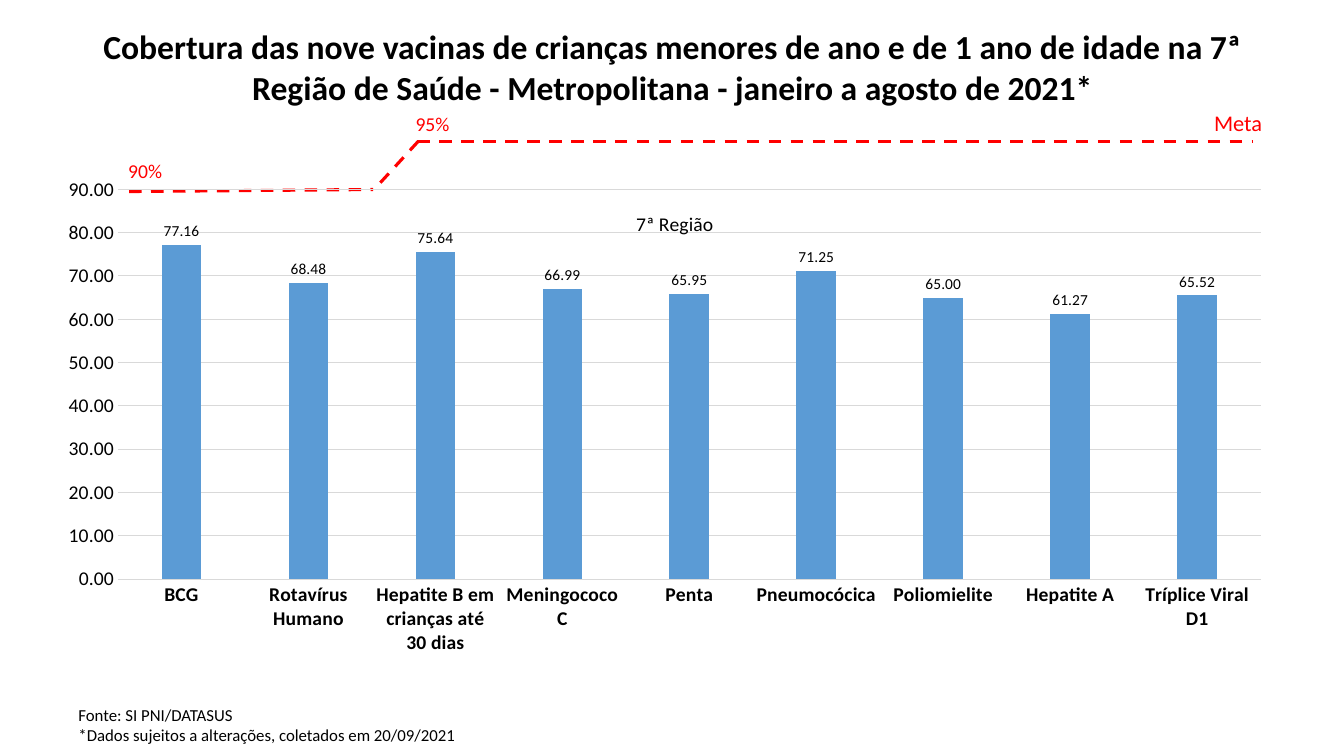
import pptx
import pptx.chart.data
import pptx.dml.color
import pptx.enum.chart
import pptx.enum.dml
import pptx.enum.shapes
import pptx.enum.text
import pptx.oxml
import pptx.oxml.ns
import pptx.util

EMU_PER_PX = 9144
FONT = "Calibri"
COLOURS = {"text": "000000", "target": "FF0000", "bar": "5B9BD5", "grid": "D9D9D9"}
COVERAGE = {
    "BCG": 77.16,
    "Rotavírus Humano": 68.48,
    "Hepatite B em crianças até 30 dias": 75.64,
    "Meningococo C": 66.99,
    "Penta": 65.95,
    "Pneumocócica": 71.25,
    "Poliomielite": 65.00,
    "Hepatite A": 61.27,
    "Tríplice Viral D1": 65.52,
}
TARGET_LINES = [
    ((128, 190), (370, 188)),
    ((415, 140), (372, 187)),
    ((414, 140), (1243, 140)),
]
TARGET_LABELS = [
    ("95%", (402, 106, 54, 34), 14),
    ("90%", (117, 153, 54, 34), 14),
    ("Meta", (1194, 103, 68, 37), 16),
]


def px(*lengths):
    return [pptx.util.Emu(length * EMU_PER_PX) for length in lengths]


def colour(name):
    return pptx.dml.color.RGBColor.from_string(COLOURS[name])


def style_font(font, size, colour_name="text", bold=False):
    font.name = FONT
    font.size = pptx.util.Pt(size)
    font.bold = bold
    font.color.rgb = colour(colour_name)


def style_line(line, colour_name, width):
    line.color.rgb = colour(colour_name)
    line.width = pptx.util.Pt(width)


def add_text(slide, box, lines, size, colour_name="text", bold=False, centred=True, wrap=True):
    frame = slide.shapes.add_textbox(*px(*box)).text_frame
    frame.word_wrap = wrap
    frame.auto_size = pptx.enum.text.MSO_AUTO_SIZE.SHAPE_TO_FIT_TEXT
    for index, line in enumerate(lines):
        paragraph = frame.add_paragraph() if index else frame.paragraphs[0]
        if centred:
            paragraph.alignment = pptx.enum.text.PP_ALIGN.CENTER
        run = paragraph.add_run()
        run.text = line
        style_font(run.font, size, colour_name, bold)


def add_target_lines(slide):
    group = slide.shapes.add_group_shape()
    for start, end in TARGET_LINES:
        connector = group.shapes.add_connector(
            pptx.enum.shapes.MSO_CONNECTOR.STRAIGHT, *px(*start, *end)
        )
        style_line(connector.line, "target", 2.25)
        connector.line.dash_style = pptx.enum.dml.MSO_LINE.DASH
        properties = connector._element.spPr
        properties.append(pptx.oxml.parse_xml(
            f"<a:effectLst {pptx.oxml.ns.nsdecls('a')}/>"
        ))


def set_layout(element, position, **values):
    """Give a chart part a manual layout, as its child at the given position."""
    for old_layout in element.findall(pptx.oxml.ns.qn("c:layout")):
        element.remove(old_layout)
    settings = "".join(f'<c:{name} val="{value}"/>' for name, value in values.items())
    element.insert(position, pptx.oxml.parse_xml(
        f"<c:layout {pptx.oxml.ns.nsdecls('c')}>"
        f"<c:manualLayout>{settings}</c:manualLayout></c:layout>"
    ))


def style_chart_title(chart):
    chart.has_title = True
    run = chart.chart_title.text_frame.paragraphs[0].add_run()
    run.text = "7ª Região"
    style_font(run.font, 14)
    set_layout(chart.chart_title._element, 1, xMode="edge", yMode="edge", x=0.467, y=0.05)


def style_axes(chart):
    for axis in (chart.category_axis, chart.value_axis):
        axis.major_tick_mark = pptx.enum.chart.XL_TICK_MARK.NONE
        axis.minor_tick_mark = pptx.enum.chart.XL_TICK_MARK.NONE
    style_font(chart.category_axis.tick_labels.font, 14, bold=True)
    style_line(chart.category_axis.format.line, "grid", 0.75)

    value_axis = chart.value_axis
    value_axis.minimum_scale = 0
    value_axis.maximum_scale = 90
    value_axis.major_unit = 10
    value_axis.format.line.fill.background()
    value_axis.has_major_gridlines = True
    style_line(value_axis.major_gridlines.format.line, "grid", 0.75)
    value_axis.tick_labels.number_format = "0.00"
    value_axis.tick_labels.number_format_is_linked = False
    style_font(value_axis.tick_labels.font, 14)


def style_bars(plot):
    plot.gap_width = 219
    plot.overlap = -27
    plot.vary_by_categories = False
    fill = plot.series[0].format.fill
    fill.solid()
    fill.fore_color.rgb = colour("bar")
    plot.has_data_labels = True
    labels = plot.data_labels
    labels.show_value = True
    labels.position = pptx.enum.chart.XL_LABEL_POSITION.OUTSIDE_END
    labels.number_format = "0.00"
    labels.number_format_is_linked = False
    style_font(labels.font, 11)


def add_coverage_chart(slide):
    data = pptx.chart.data.CategoryChartData(number_format="0.00")
    data.categories = list(COVERAGE)
    data.add_series("7ª Região", list(COVERAGE.values()))
    chart = slide.shapes.add_chart(
        pptx.enum.chart.XL_CHART_TYPE.COLUMN_CLUSTERED, *px(68, 176, 1198, 518), data
    ).chart
    style_font(chart.font, 10)
    chart.has_legend = False
    style_chart_title(chart)
    style_axes(chart)
    style_bars(chart.plots[0])
    set_layout(
        chart._chartSpace.chart.plotArea, 0, layoutTarget="inner",
        xMode="edge", yMode="edge", x=0.041, y=0.016, w=0.946, h=0.752,
    )


def main():
    presentation = pptx.Presentation()
    presentation.slide_width, presentation.slide_height = px(1333, 750)
    slide = presentation.slides.add_slide(presentation.slide_layouts[6])

    add_text(
        slide, (68, 694, 696, 50),
        ["Fonte: SI PNI/DATASUS", "*Dados sujeitos a alterações, coletados em 20/09/2021"],
        12, centred=False,
    )
    add_target_lines(slide)
    add_coverage_chart(slide)
    add_text(
        slide, (68, 21, 1198, 91),
        ["Cobertura das nove vacinas de crianças menores de ano e de 1 ano de idade "
         "na 7ª Região de Saúde - Metropolitana - janeiro a agosto de 2021*"],
        24, bold=True,
    )
    for label, box, size in TARGET_LABELS:
        add_text(slide, box, [label], size, "target", wrap=False)

    presentation.save("out.pptx")


if __name__ == "__main__":
    main()
